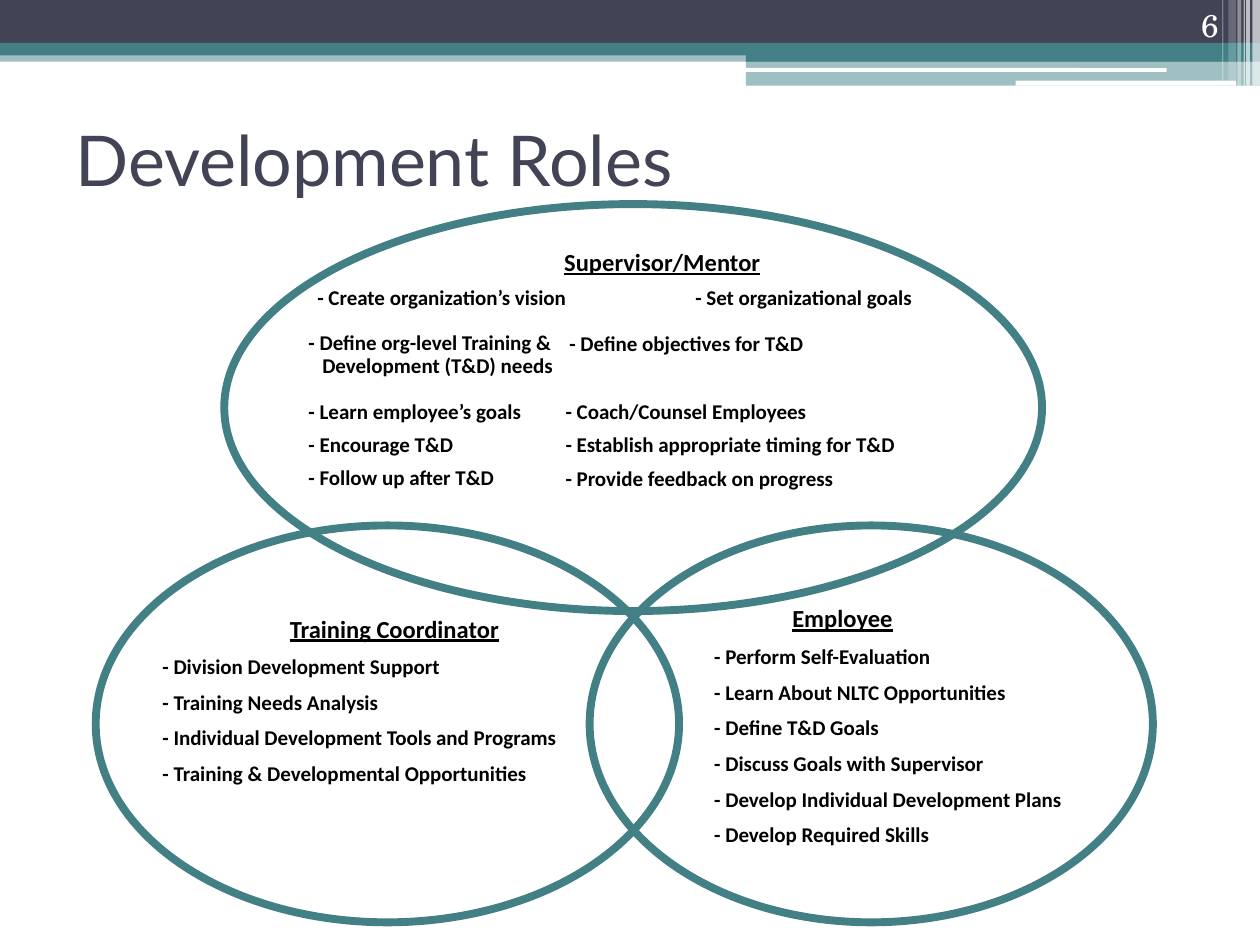
"""Build the Development Roles slide with three overlapping role circles."""
from typing import NamedTuple

from lxml.etree import SubElement
from pptx import Presentation
from pptx.dml.color import RGBColor
from pptx.enum.shapes import MSO_SHAPE as Kind
from pptx.enum.text import MSO_ANCHOR as Anchor, PP_ALIGN as Align
from pptx.oxml.ns import qn
from pptx.util import Emu, Pt

SCALE = 9144
TEAL, NAVY, WHITE, BLACK = "438086", "424456", "FFFFFF", "000000"


class Box(NamedTuple):
    left: int
    top: int
    width: int
    height: int


class Bar(NamedTuple):
    box: Box
    color: str
    alpha: int = 100
    kind: Kind = Kind.RECTANGLE


class Line(NamedTuple):
    text: str
    before: int = 6
    indent: int = 0
    size: int = 12
    color: str = BLACK
    font: str = "Calibri"
    bold: bool = True
    under: bool = False
    align: Align = Align.LEFT
    pitch: int = 0


def px(num: int) -> Emu:
    """Turn px into EMU."""
    return Emu(num * SCALE)


def rgb(code: str) -> RGBColor:
    """Turn a hex string into a colour."""
    return RGBColor.from_string(code)


def add_bar(slide, bar: Bar) -> None:
    """Draw one filled band or stripe."""
    shape = slide.shapes.add_shape(bar.kind, *map(px, bar.box))
    shape.shadow.inherit = False
    shape.line.fill.background()
    shape.fill.solid()
    shape.fill.fore_color.rgb = rgb(bar.color)
    if bar.alpha < 100:
        tint = shape._element.spPr.find(".//" + qn("a:srgbClr"))
        SubElement(tint, qn("a:alpha"), val=str(bar.alpha * 1000))


def add_ring(slide, box: Box) -> None:
    """Draw one hollow ellipse."""
    shape = slide.shapes.add_shape(Kind.OVAL, *map(px, box))
    shape.shadow.inherit = False
    shape.fill.background()
    shape.line.color.rgb = rgb(TEAL)
    shape.line.width = Pt(4.5)


def add_text(slide, box: Box, lines: list[Line], anchor: Anchor = Anchor.TOP) -> None:
    """Write lines into one text box."""
    frame = slide.shapes.add_textbox(*map(px, box)).text_frame
    frame.word_wrap = True
    frame.vertical_anchor = anchor
    for num, line in enumerate(lines):
        para = frame.add_paragraph() if num else frame.paragraphs[0]
        para.alignment = line.align
        para.space_before = Pt(line.before)
        if line.pitch:
            para.line_spacing = Pt(line.pitch)
        if line.indent:
            para._p.get_or_add_pPr().set("marL", str(px(line.indent)))
        run = para.add_run()
        run.text = line.text
        font = run.font
        font.name, font.size, font.bold = line.font, Pt(line.size), line.bold
        font.underline = line.under
        font.color.rgb = rgb(line.color)


def head(text: str, indent: int = 0, align: Align = Align.LEFT) -> Line:
    """Make an underlined role heading."""
    return Line(text, 0, indent, 14, under=True, align=align)


def row(text: str, before: int = 6, indent: int = 0) -> Line:
    """Make a line of the tightly set supervisor list."""
    return Line(text, before, indent, pitch=13)


ROUND = Kind.ROUNDED_RECTANGLE
BARS = [
    Bar(Box(0, 40, 1000, 9), TEAL, 50),
    Bar(Box(0, 0, 1000, 34), NAVY),
    Bar(Box(0, 34, 1000, 10), TEAL),
    Bar(Box(592, 39, 408, 10), TEAL),
    Bar(Box(592, 48, 408, 20), TEAL, 50),
    Bar(Box(591, 54, 335, 3), WHITE, kind=ROUND),
    Bar(Box(806, 64, 175, 4), WHITE, kind=ROUND),
]
STRIPES = [(994, 6, 68, 65), (989, 3, 68, 65), (987, 1, 68, 60),
           (982, 3, 68, 40), (975, 6, 64, 20), (970, 1, 64, 30)]
RINGS = [Box(468, 417, 447, 315), Box(178, 162, 649, 323), Box(76, 417, 463, 315)]

TRAINER = [
    "- Division Development Support",
    "- Training Needs Analysis",
    "- Individual Development Tools and Programs",
    "- Training & Developmental Opportunities",
]
WORKER = [
    "- Perform Self-Evaluation",
    "- Learn About NLTC Opportunities",
    "- Define T&D Goals",
    "- Discuss Goals with Supervisor",
    "- Develop Individual Development Plans",
    "- Develop Required Skills",
]
MENTOR = [
    head("Supervisor/Mentor", 203),
    row("- Create organization’s vision", indent=7),
    row("- Define org-level Training &", 13),
    row("Development (T&D) needs", 0, 11),
    row("- Learn employee’s goals", 13),
    row("- Encourage T&D"),
    row("- Follow up after T&D"),
]
GUIDE = [
    row("- Set organizational goals", 0, 103),
    row("- Define objectives for T&D", 13, 3),
    row("- Coach/Counsel Employees", 26),
    row("- Establish appropriate timing for T&D"),
    row("- Provide feedback on progress"),
]


def main() -> None:
    """Build and save the slide."""
    deck = Presentation()
    deck.slide_width, deck.slide_height = px(1000), px(750)
    slide = deck.slides.add_slide(deck.slide_layouts[6])
    for bar in BARS:
        add_bar(slide, bar)
    for left, width, height, alpha in STRIPES:
        add_bar(slide, Bar(Box(left, 0, width, height), WHITE, alpha))
    title = Line("Development Roles", 0, 0, 40, NAVY, "Lato", False)
    add_text(slide, Box(50, 67, 900, 117), [title], Anchor.MIDDLE)
    for ring in RINGS:
        add_ring(slide, ring)
    add_text(slide, Box(119, 482, 388, 155),
             [head("Training Coordinator", align=Align.CENTER), *map(Line, TRAINER)])
    add_text(slide, Box(557, 474, 343, 215),
             [head("Employee", 62), *map(Line, WORKER)])
    add_text(slide, Box(235, 191, 607, 210), MENTOR)
    add_text(slide, Box(439, 223, 403, 178), GUIDE)
    page = Line("6", 0, 0, 18, WHITE, "TeX Gyre Schola", False, align=Align.RIGHT)
    add_text(slide, Box(894, 0, 83, 40), [page], Anchor.BOTTOM)
    deck.save("out.pptx")


if __name__ == "__main__":
    main()
